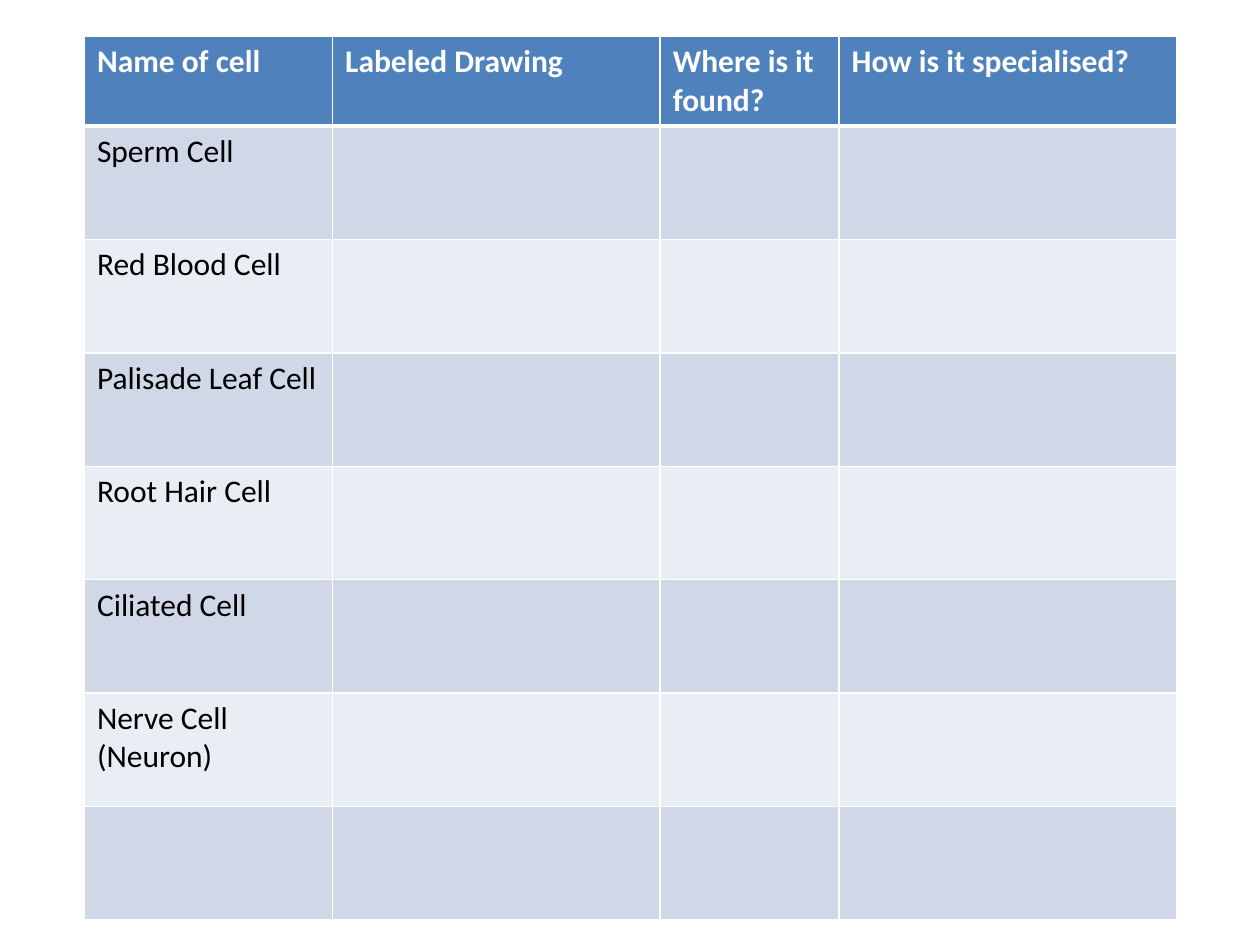
from lxml import etree
from pptx import Presentation
from pptx.dml.color import RGBColor
from pptx.oxml.ns import qn
from pptx.util import Inches, Pt

HEADERS = ["Name of cell", "Labeled Drawing", "Where is it found?", "How is it specialised?"]
CELL_NAMES = ["Sperm Cell", "Red Blood Cell", "Palisade Leaf Cell", "Root Hair Cell",
              "Ciliated Cell", "Nerve Cell (Neuron)", ""]
COLORS = {"header": "4F81BD", "odd": "D0D8E8", "even": "E9EDF4",
          "border": "FFFFFF", "header_text": "FFFFFF", "text": "000000"}
FONT, FONT_SIZE = "Calibri", 18
LEFT, TOP = 0.67, 0.29
COL_WIDTHS = [1.97, 2.6, 1.42, 2.68]
HEADER_HEIGHT, ROW_HEIGHT = 0.7, 0.9
THIN, THICK = 1, 3


def set_borders(cell, top, bottom):
    """Draw all four sides; top and bottom are widths in points."""
    tcPr = cell._tc.get_or_add_tcPr()
    for side, width in (("L", THIN), ("R", THIN), ("T", top), ("B", bottom)):
        ln = etree.SubElement(tcPr, qn(f"a:ln{side}"), w=str(Pt(width)))
        fill = etree.SubElement(ln, qn("a:solidFill"))
        etree.SubElement(fill, qn("a:srgbClr"), val=COLORS["border"])


def fill_cell(cell, text, fill, color, bold):
    cell.fill.solid()
    cell.fill.fore_color.rgb = RGBColor.from_string(COLORS[fill])
    if text:
        r = cell.text_frame.paragraphs[0].add_run()
        r.text = text
        r.font.name, r.font.size, r.font.bold = FONT, Pt(FONT_SIZE), bold
        r.font.color.rgb = RGBColor.from_string(COLORS[color])


def main():
    prs = Presentation()
    prs.slide_width, prs.slide_height = Inches(10), Inches(7.5)
    s = prs.slides.add_slide(prs.slide_layouts[6])

    rows = [HEADERS] + [[name] + [""] * (len(HEADERS) - 1) for name in CELL_NAMES]
    heights = [HEADER_HEIGHT] + [ROW_HEIGHT] * len(CELL_NAMES)
    table = s.shapes.add_table(len(rows), len(HEADERS), Inches(LEFT), Inches(TOP),
                               Inches(sum(COL_WIDTHS)), Inches(sum(heights))).table
    for column, width in zip(table.columns, COL_WIDTHS):
        column.width = Inches(width)

    for i, (texts, height) in enumerate(zip(rows, heights)):
        table.rows[i].height = Inches(height)
        header = i == 0
        fill = "header" if header else "odd" if i % 2 else "even"
        for j, text in enumerate(texts):
            cell = table.cell(i, j)
            set_borders(cell, THICK if i == 1 else THIN, THICK if header else THIN)
            fill_cell(cell, text, fill, "header_text" if header else "text", header)

    prs.save("out.pptx")


if __name__ == "__main__":
    main()
